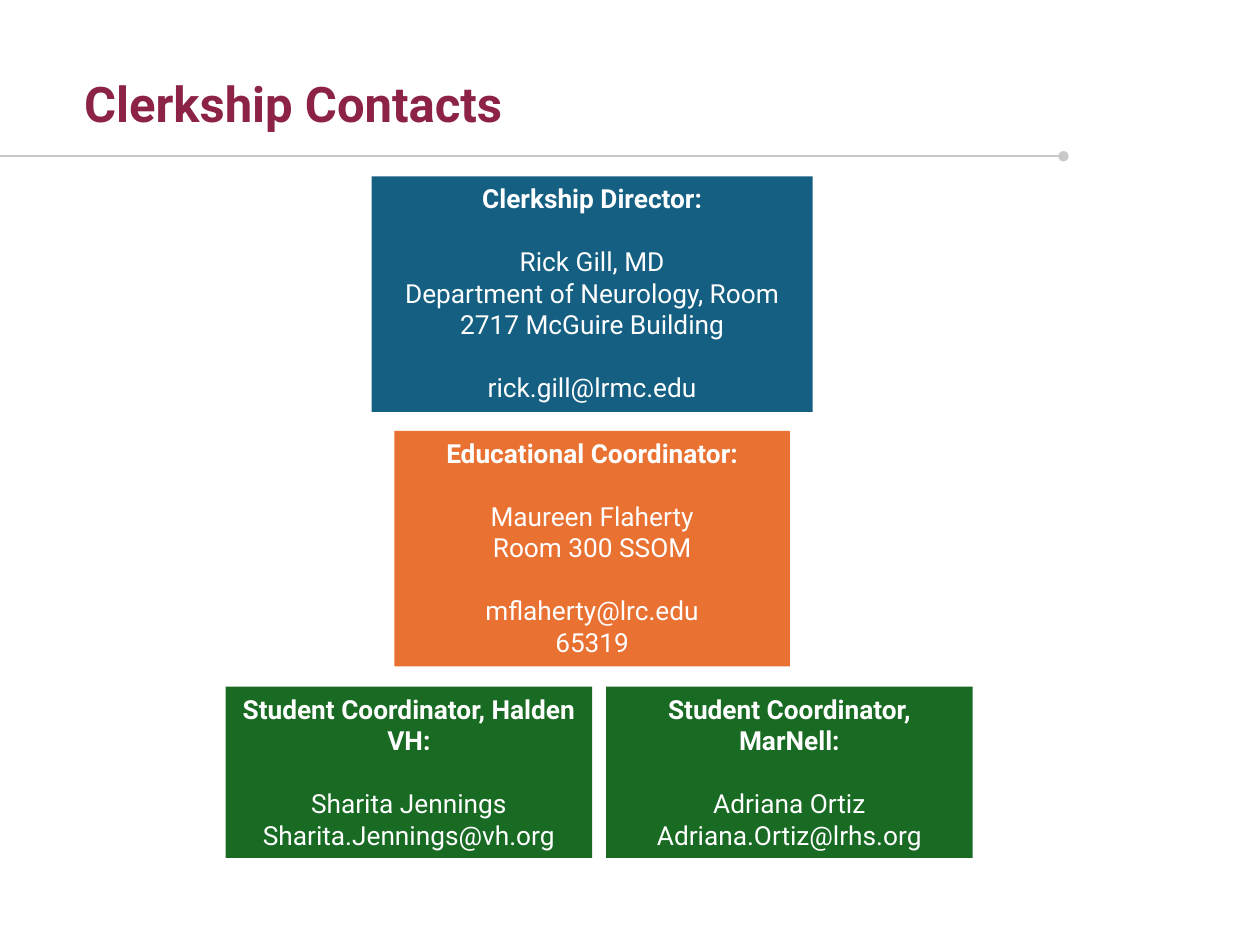
from pptx import Presentation
from pptx.dml.color import RGBColor
from pptx.enum.shapes import MSO_CONNECTOR, MSO_SHAPE
from pptx.enum.text import MSO_ANCHOR, PP_ALIGN
from pptx.oxml.ns import qn
from pptx.util import Inches, Pt
from lxml import etree

CENTER, LEFT = PP_ALIGN.CENTER, PP_ALIGN.LEFT
TOP, MIDDLE = MSO_ANCHOR.TOP, MSO_ANCHOR.MIDDLE
RECTANGLE, STRAIGHT = MSO_SHAPE.RECTANGLE, MSO_CONNECTOR.STRAIGHT

MAROON = RGBColor(0x8C, 0x23, 0x47)
GRAY = RGBColor(0xC9, 0xC9, 0xC9)
BLUE = RGBColor(0x15, 0x60, 0x82)
ORANGE = RGBColor(0xE9, 0x71, 0x32)
GREEN = RGBColor(0x19, 0x6B, 0x24)
WHITE = RGBColor(0xFF, 0xFF, 0xFF)

FONT = "Roboto"
BODY_SIZE = 15
GROUP_GAP = Pt(18)  # one body line between groups

# Each card: left, width, fill, role, then groups of lines set apart by a gap
CARD_ROWS = [
    (1.4, 1.87, [
        (2.95, 3.5, BLUE, "Clerkship Director:",
         [["Rick Gill, MD", "Department of Neurology, Room 2717 McGuire Building"],
          ["rick.gill@lrmc.edu"]]),
    ]),
    (3.42, 1.87, [
        (3.13, 3.14, ORANGE, "Educational Coordinator:",
         [["Maureen Flaherty", "Room 300 SSOM"],
          ["mflaherty@lrc.edu", "65319"]]),
    ]),
    (5.45, 1.36, [
        (1.79, 2.91, GREEN, "Student Coordinator, Halden VH:",
         [["Sharita Jennings", "Sharita.Jennings@vh.org"]]),
        (4.81, 2.91, GREEN, "Student Coordinator, MarNell:",
         [["Adriana Ortiz", "Adriana.Ortiz@lrhs.org"]]),
    ]),
]


def write_para(para, text, size, color, bold, align):
    para.text = text
    para.alignment = align
    font = para.runs[0].font
    font.name, font.size, font.bold = FONT, Pt(size), bold
    font.color.rgb = color


def add_heading(page, left, top, width, height):
    """Title text with the rule below it, running in from the page edge."""
    box = page.shapes.add_textbox(Inches(left), Inches(top), Inches(width), Inches(height))
    frame = box.text_frame
    frame.word_wrap = True
    frame.vertical_anchor = MIDDLE
    para = frame.paragraphs[0]
    write_para(para, "Clerkship Contacts", 28, MAROON, True, LEFT)
    para.line_spacing = 0.9

    # Rule ending in a dot
    rule_y = Inches(top + height + 0.13)
    rule = page.shapes.add_connector(STRAIGHT, 0, rule_y, Inches(8.44), rule_y)
    rule.line.color.rgb = GRAY
    rule.line.width = Pt(1)
    etree.SubElement(rule.line._get_or_add_ln(), qn("a:tailEnd"), type="oval")
    etree.SubElement(rule._element.spPr, qn("a:effectLst"))


def add_card(page, left, top, width, height, fill, role, groups):
    """Filled box with a bold role and spaced groups of contact lines."""
    card = page.shapes.add_shape(
        RECTANGLE, Inches(left), Inches(top), Inches(width), Inches(height))
    card.shadow.inherit = False
    card.fill.solid()
    card.fill.fore_color.rgb = fill
    card.line.fill.background()

    frame = card.text_frame
    frame.word_wrap = True
    frame.vertical_anchor = TOP
    write_para(frame.paragraphs[0], role, BODY_SIZE, WHITE, True, CENTER)
    for group in groups:
        for index, text in enumerate(group):
            para = frame.add_paragraph()
            write_para(para, text, BODY_SIZE, WHITE, False, CENTER)
            if index == 0:
                para.space_before = GROUP_GAP


def main():
    deck = Presentation()
    deck.slide_width, deck.slide_height = Inches(10), Inches(7.5)
    page = deck.slides.add_slide(deck.slide_layouts[6])
    add_heading(page, 0.57, 0.58, 7.27, 0.53)
    for top, height, cards in CARD_ROWS:
        for left, width, fill, role, groups in cards:
            add_card(page, left, top, width, height, fill, role, groups)
    deck.save("out.pptx")


if __name__ == "__main__":
    main()
